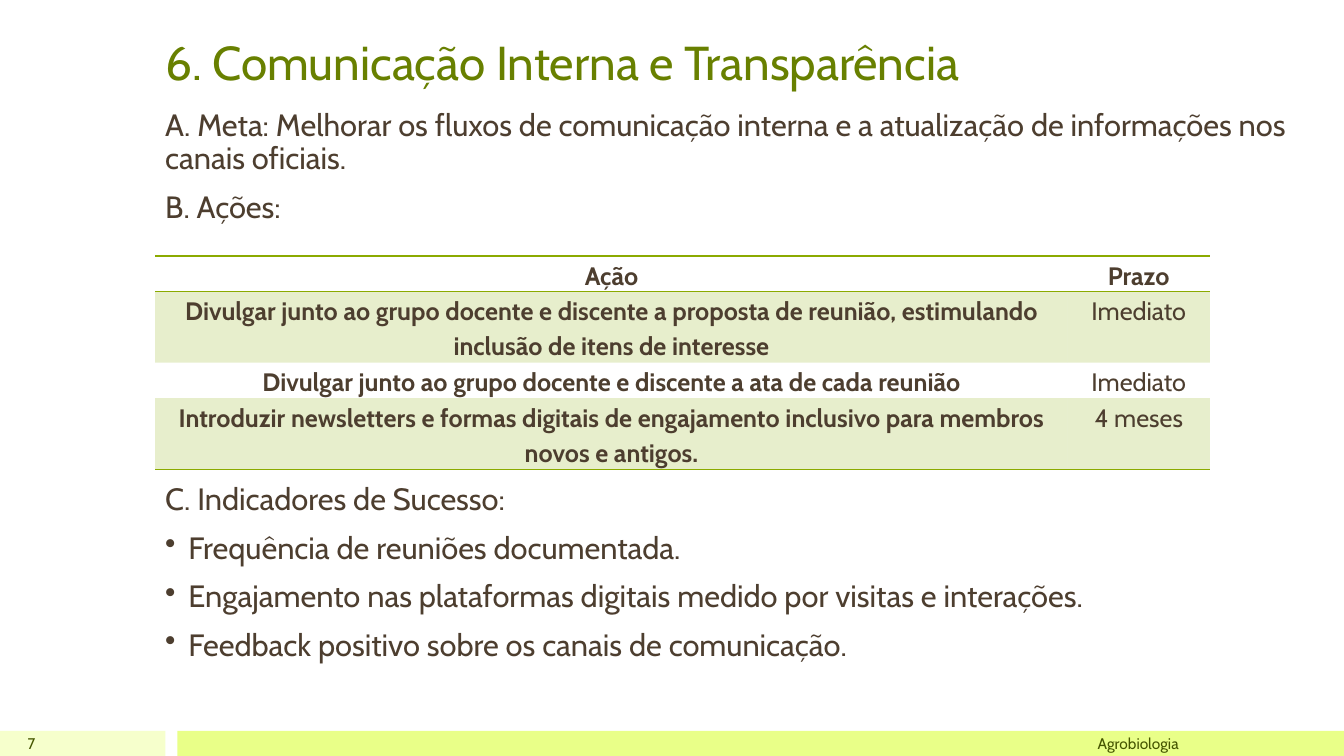
from pptx import Presentation, util as u
from pptx.dml.color import RGBColor
from pptx.enum import shapes, text
from pptx.oxml import parse_xml
from pptx.oxml.ns import nsdecls, qn
from lxml import etree

PALE = RGBColor(0xF6, 0xFF, 0xCC)
LIME = RGBColor(0xE9, 0xFF, 0x88)
GREEN = RGBColor(0x68, 0x80, 0x00)
OLIVE = RGBColor(0x8B, 0xAA, 0x00)
MOSS = RGBColor(0x45, 0x55, 0x00)
BROWN = RGBColor(0x4D, 0x3E, 0x2F)

LEFT, FOOT, BAND = 11.55, 96.67, 3.33
ROW = 4.7
GAP = 11
TABLE_GAP = 185  # points left free between the text above and below the table
TOP, MID, END = text.MSO_ANCHOR.TOP, text.MSO_ANCHOR.MIDDLE, text.MSO_ANCHOR.BOTTOM
CENTER, RIGHT = text.PP_ALIGN.CENTER, text.PP_ALIGN.RIGHT

ROWS = [
    ("Ação", "Prazo"),
    ("Divulgar junto ao grupo docente e discente a proposta de reunião, "
     "estimulando inclusão de itens de interesse", "Imediato"),
    ("Divulgar junto ao grupo docente e discente a ata de cada reunião", "Imediato"),
    ("Introduzir newsletters e formas digitais de engajamento inclusivo "
     "para membros novos e antigos.", "4 meses"),
]
BODY = [
    ("A. Meta: Melhorar os fluxos de comunicação interna e a atualização "
     "de informações nos canais oficiais.", GAP, False),
    ("B. Ações:", GAP, False),
    ("C. Indicadores de Sucesso:", TABLE_GAP, False),
    ("Frequência de reuniões documentada.", GAP, True),
    ("Engajamento nas plataformas digitais medido por visitas e interações.", GAP, True),
    ("Feedback positivo sobre os canais de comunicação.", GAP, True),
]


class Page:
    """Style and current slide; lengths are percentages of the slide's size."""

    def __init__(self, deck, face):
        self.wide, self.high = deck.slide_width, deck.slide_height
        self.face = face
        self.slide = deck.slides.add_slide(deck.slide_layouts[6])

    def across(self, share):
        return round(self.wide * share / 100)

    def down(self, share):
        return round(self.high * share / 100)

    def place(self, x, y, w, h):
        return self.across(x), self.down(y), self.across(w), self.down(h)

    def bar(self, x, y, w, h, color):
        bar = self.slide.shapes.add_shape(
            shapes.MSO_SHAPE.RECTANGLE, *self.place(x, y, w, h))
        bar.shadow.inherit = False
        bar.fill.solid()
        bar.fill.fore_color.rgb = color
        bar.line.fill.background()

    def box(self, x, y, w, h, anchor=TOP):
        frame = self.slide.shapes.add_textbox(*self.place(x, y, w, h)).text_frame
        frame.word_wrap = True
        frame.vertical_anchor = anchor
        return frame

    def label(self, para, words, size, color, bold=False, align=None, lead=None):
        run = para.add_run()
        run.text = words
        font = run.font
        font.name, font.size, font.bold = self.face, u.Pt(size), bold
        font.color.rgb = color
        para.alignment = align
        para.line_spacing = lead

    def bullet(self, para):
        props = para._p.get_or_add_pPr()
        props.set("marL", str(u.Inches(0.23)))
        props.set("indent", str(-u.Inches(0.23)))
        etree.SubElement(props, qn("a:buChar")).set("char", "•")

    def body(self, items, x, y, w, h):
        frame = self.box(x, y, w, h)
        for i, (words, gap, dot) in enumerate(items):
            para = frame.add_paragraph() if i else frame.paragraphs[0]
            self.label(para, words, 22, BROWN, lead=0.9)
            para.space_before = u.Pt(gap)
            if dot:
                self.bullet(para)

    def edge(self, cell, sides):
        """Draw the named sides of a cell and clear the others."""
        props = cell._tc.get_or_add_tcPr()
        for i, side in enumerate("LRTB"):
            fill = (f'<a:solidFill><a:srgbClr val="{OLIVE}"/></a:solidFill>'
                    if side in sides else "<a:noFill/>")
            props.insert(i, parse_xml(
                f'<a:ln{side} {nsdecls("a")} w="{u.Pt(1)}">{fill}</a:ln{side}>'))

    def tint(self, cell):
        cell.fill.solid()
        cell.fill.fore_color.rgb = OLIVE
        color = cell._tc.tcPr.find(".//" + qn("a:srgbClr"))
        etree.SubElement(color, qn("a:alpha")).set("val", "20000")

    def table(self, rows, x, y, cols, lines):
        """Lines gives each row's count of text lines."""
        spot = self.place(x, y, sum(cols), ROW * sum(lines))
        grid = self.slide.shapes.add_table(len(rows), len(cols), *spot).table
        grid.first_row = grid.horz_banding = False
        for col, share in zip(grid.columns, cols):
            col.width = self.across(share)
        for r, (row, count) in enumerate(zip(rows, lines)):
            grid.rows[r].height = self.down(ROW * count)
            sides = ("T" if r < 2 else "") + ("B" if r in (0, len(rows) - 1) else "")
            for c, words in enumerate(row):
                cell = grid.cell(r, c)
                cell.margin_left = cell.margin_right = u.Inches(0.07)
                cell.margin_top = cell.margin_bottom = 0
                if r % 2:
                    self.tint(cell)
                else:
                    cell.fill.background()
                self.edge(cell, sides)
                para = cell.text_frame.paragraphs[0]
                self.label(para, words, 18, BROWN, r == 0 or c == 0, CENTER, 1.15)
                para.space_after = u.Pt(10)


def main():
    deck = Presentation()
    deck.slide_width, deck.slide_height = u.Inches(13.33), u.Inches(7.5)
    page = Page(deck, "Cabin")
    page.bar(0, FOOT, 12.3, BAND, PALE)
    page.bar(13.2, FOOT, 86.8, BAND, LIME)
    title = page.box(LEFT, 1.2, 76.9, 11.47, END)
    page.label(title.paragraphs[0], "6. Comunicação Interna e Transparência",
               34, GREEN, lead=0.9)
    page.body(BODY, LEFT, 13.87, 86.27, 76.27)
    for words, x, w in (("7", 0, 3.38), ("Agrobiologia", 13.43, 75.02)):
        note = page.box(x, FOOT, w, BAND, MID)
        page.label(note.paragraphs[0], words, 11, MOSS, align=RIGHT)
    page.table(ROWS, LEFT, 33.87, (67.89, 10.58), (1, 2, 1, 2))
    deck.save("out.pptx")


if __name__ == "__main__":
    main()
